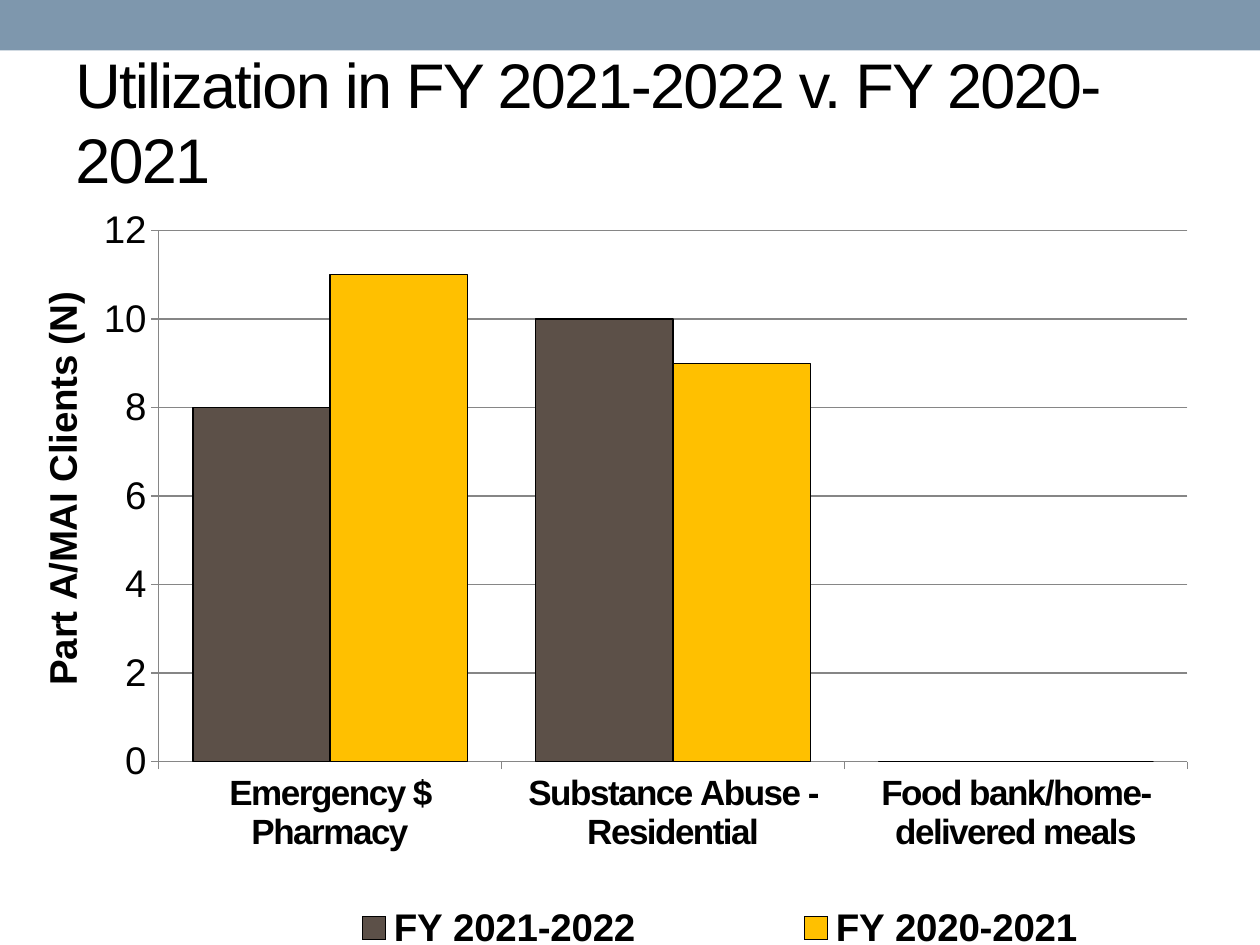
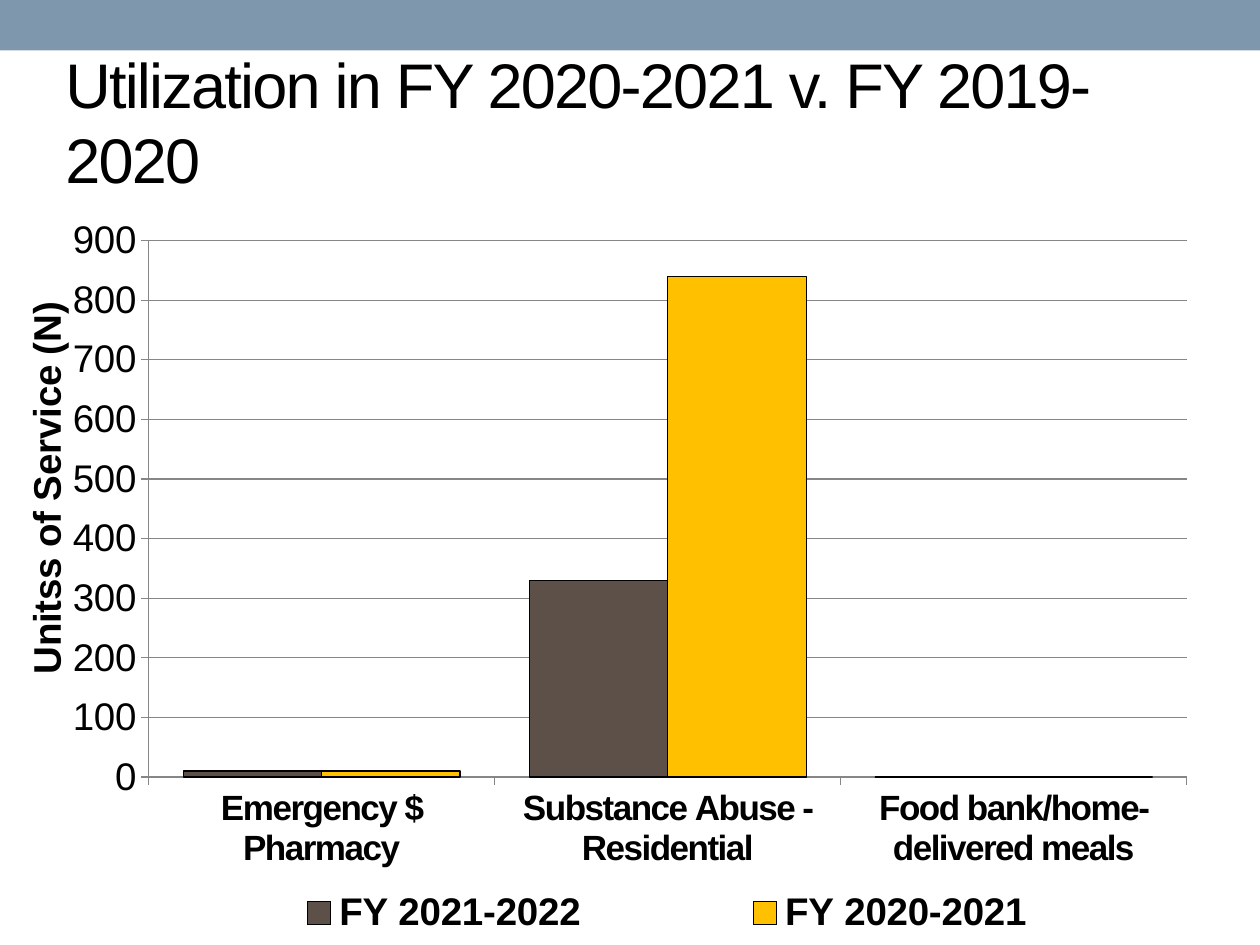
from lxml import etree
from pptx import Presentation
from pptx.chart.data import CategoryChartData
from pptx.dml.color import RGBColor
from pptx.enum.chart import XL_CHART_TYPE, XL_LEGEND_POSITION, XL_TICK_MARK
from pptx.enum.shapes import MSO_SHAPE
from pptx.enum.text import MSO_ANCHOR
from pptx.oxml import parse_xml
from pptx.oxml.ns import nsdecls
from pptx.util import Inches, Pt

FONT = "Arial"
BAND, BLACK, GRID = "7E97AD", "000000", "868686"
SERIES_COLORS = {"FY 2021-2022": "5C5048", "FY 2020-2021": "FFC000"}
SERVICES = ["Emergency $ Pharmacy", "Substance Abuse - Residential",
            "Food bank/home-delivered meals"]


def rgb(color):
    return RGBColor.from_string(color)


def style_font(font, size, bold=False):
    font.name = FONT
    font.size = Pt(size)
    font.bold = bold
    font.color.rgb = rgb(BLACK)


def style_line(line, color):
    line.color.rgb = rgb(color)
    line.width = Pt(0.75)


def add_band(s):
    sp = s.shapes.add_shape(MSO_SHAPE.RECTANGLE, 0, 0, Inches(10), Inches(0.4))
    sp.shadow.inherit = False
    sp.fill.solid()
    sp.fill.fore_color.rgb = rgb(BAND)
    sp.line.fill.background()


def add_title(s, text, left):
    sp = s.shapes.add_textbox(Inches(left), Inches(0.42), Inches(9), Inches(1.08))
    tf = sp.text_frame
    tf.word_wrap = True
    tf.vertical_anchor = MSO_ANCHOR.MIDDLE
    r = tf.paragraphs[0].add_run()
    r.text = text
    style_font(r.font, 36)
    r._r.get_or_add_rPr().set("spc", "-100")


def manual_layout(area, inner=False):
    target = '<c:layoutTarget val="inner"/>' if inner else ""
    sizes = "".join(f'<c:{tag} val="{value}"/>'
                    for tag, value in zip("xywh", area))
    return parse_xml(f'<c:layout {nsdecls("c")}><c:manualLayout>{target}'
                     f'<c:xMode val="edge"/><c:yMode val="edge"/>{sizes}'
                     '</c:manualLayout></c:layout>')


def replace_layout(parent, layout, index):
    for old in parent.findall(etree.QName(layout).text):
        parent.remove(old)
    parent.insert(index, layout)


def style_axes(chart, unit):
    for axis in (chart.category_axis, chart.value_axis):
        axis.major_tick_mark = XL_TICK_MARK.OUTSIDE
        axis.minor_tick_mark = XL_TICK_MARK.NONE
        style_line(axis.format.line, GRID)
    labels = chart.category_axis.tick_labels.font
    style_font(labels, 20, True)
    labels._rPr.set("spc", "-100")
    body = chart.category_axis._element.txPr.bodyPr
    body.set("rot", "0")
    body.set("vert", "horz")

    axis = chart.value_axis
    style_font(axis.tick_labels.font, 22)
    axis.tick_labels.number_format = "#,##0"
    axis.tick_labels.number_format_is_linked = False
    axis.has_major_gridlines = True
    style_line(axis.major_gridlines.format.line, GRID)
    r = axis.axis_title.text_frame.paragraphs[0].add_run()
    r.text = unit
    style_font(r.font, 22, True)
    replace_layout(axis.axis_title._element, manual_layout((0.02, 0.125)), 1)


def add_column_chart(s, box, unit, values, plot_area, legend_area):
    data = CategoryChartData()
    data.categories = SERVICES
    for year, counts in zip(SERIES_COLORS, values):
        data.add_series(year, counts)
    chart = s.shapes.add_chart(XL_CHART_TYPE.COLUMN_CLUSTERED,
                               *map(Inches, box), data).chart
    style_font(chart.font, 22)
    chart.has_title = False
    style_axes(chart, unit)

    plot = chart.plots[0]
    plot.gap_width = 50
    plot.overlap = 0
    plot.vary_by_categories = False
    for series in plot.series:
        series.format.fill.solid()
        series.format.fill.fore_color.rgb = rgb(SERIES_COLORS[series.name])
        style_line(series.format.line, BLACK)

    chart.has_legend = True
    legend = chart.legend
    legend.position = XL_LEGEND_POSITION.BOTTOM
    legend.include_in_layout = False
    style_font(legend.font, 22, True)
    replace_layout(legend._element, manual_layout(legend_area), 1)
    replace_layout(chart._chartSpace.chart.plotArea,
                   manual_layout(plot_area, inner=True), 0)


def add_utilization_slide(prs, title, title_left, **chart):
    s = prs.slides.add_slide(prs.slide_layouts[6])
    add_band(s)
    add_title(s, title, title_left)
    add_column_chart(s, **chart)


def main():
    prs = Presentation()
    prs.slide_width, prs.slide_height = Inches(10), Inches(7.5)
    add_utilization_slide(
        prs, "Utilization in FY 2021-2022 v. FY 2020-2021", 0.5,
        box=(0.05, 1.5, 9.91, 6.11), unit="Part A/MAI Clients (N)",
        values=[(8, 10, 0), (11, 9, 0)],
        plot_area=(0.122, 0.054, 0.824, 0.69),
        legend_area=(0.16, 0.92, 0.823, 0.08))
    add_utilization_slide(
        prs, "Utilization in FY 2020-2021 v. FY 2019-2020", 0.42,
        box=(-0.08, 1.58, 10, 6.11), unit="Unitss of Service (N)",
        values=[(10, 330, 0), (10, 840, 0)],
        plot_area=(0.126, 0.054, 0.824, 0.697),
        legend_area=(0.125, 0.887, 0.825, 0.08))
    prs.save("out.pptx")


if __name__ == "__main__":
    main()
